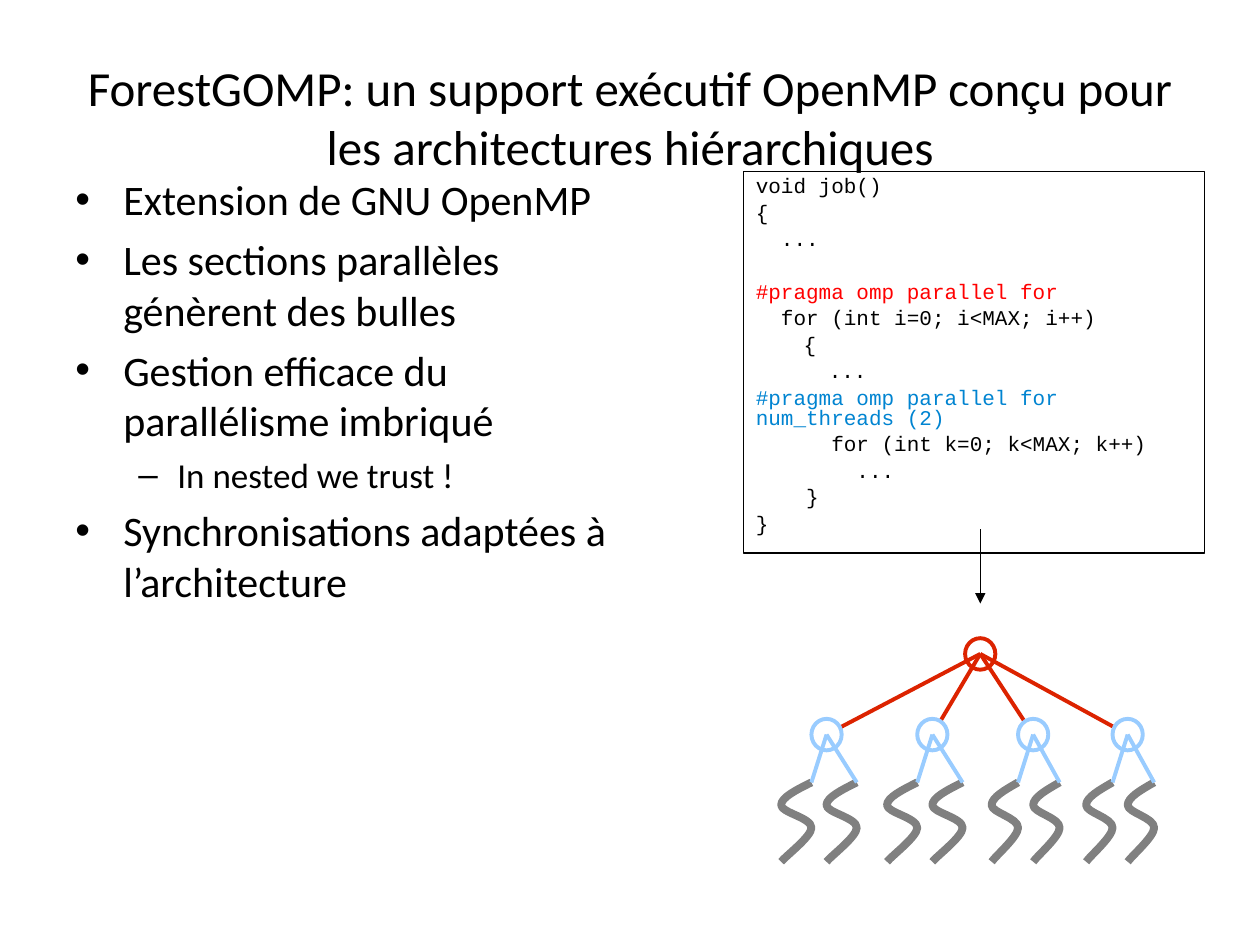
"""Build the ForestGOMP slide: bullet points, nested OpenMP code and its bubble tree."""
from pptx import Presentation
from pptx import util as u
from pptx.dml.color import RGBColor
from pptx.enum import shapes, text
from pptx.oxml import ns
from pptx.oxml.xmlchemy import OxmlElement

BLACK = RGBColor(0, 0, 0)
WHITE = RGBColor(255, 255, 255)
RED = RGBColor(255, 0, 0)
BLUE = RGBColor(0x00, 0x84, 0xD1)
ROOT = RGBColor(0xDC, 0x23, 0x00)
SKY = RGBColor(0x99, 0xCC, 0xFF)
GRAY = RGBColor(0x80, 0x80, 0x80)

TITLE = "ForestGOMP: un support exécutif OpenMP conçu pour les architectures hiérarchiques"
POINTS = [
    (0, "Extension de GNU OpenMP"),
    (0, "Les sections parallèles génèrent des bulles"),
    (0, "Gestion efficace du parallélisme imbriqué"),
    (1, "In nested we trust !"),
    (0, "Synchronisations adaptées à l’architecture"),
]
LEVELS = [("•", 24, 0.38, 0.38), ("–", 20, 0.81, 0.31)]
CODE = [
    ("void job()", BLACK),
    ("{", BLACK),
    ("  ...", BLACK),
    ("", BLACK),
    ("#pragma omp parallel for", RED),
    ("  for (int i=0; i<MAX; i++)", BLACK),
    ("\t{", BLACK),
    ("\t  ...", BLACK),
    ("#pragma omp parallel for num_threads (2)", BLUE),
    ("      for (int k=0; k<MAX; k++)", BLACK),
    ("        ...", BLACK),
    ("    }", BLACK),
    ("}", BLACK),
]
TOP = (7.78, 5.19)
NODES = [(6.56, 0.24), (7.4, 0.24), (8.2, 0.21), (8.95, 0.21)]
NODE_Y, LEG_Y = 5.83, 6.21
WAVE = [(1, 0), (0.5, 0.06), (0, 0.12), (0, 0.18), (0, 0.24),
        (1, 0.28), (1, 0.36), (1, 0.43), (0.17, 0.58), (0, 0.63)]


def style(font, name, size, color):
    font.name, font.size = name, u.Pt(size)
    font.color.rgb = color


def add_tag(parent, tag, **attrs):
    node = OxmlElement(tag)
    for key, value in attrs.items():
        node.set(key, str(value))
    parent.append(node)
    return node


def fill_lines(frame, items):
    frame.word_wrap = True
    for i, item in enumerate(items):
        para = frame.paragraphs[0] if i == 0 else frame.add_paragraph()
        if item[-1]:
            para.add_run().text = item[-1]
        yield para, item[0]


def add_line(slide, start, end, color, width):
    line = slide.shapes.add_connector(
        shapes.MSO_CONNECTOR.STRAIGHT, *map(u.Inches, start + end))
    line.line.color.rgb, line.line.width = color, u.Pt(width)
    add_tag(line._element.spPr, "a:effectLst")
    return line


def add_node(slide, x, y, color):
    node = slide.shapes.add_shape(
        shapes.MSO_SHAPE.OVAL, *map(u.Inches, (x - 0.12, y - 0.125, 0.24, 0.25)))
    node.shadow.inherit = False
    node.fill.solid()
    node.fill.fore_color.rgb = WHITE
    node.line.color.rgb, node.line.width = color, u.Pt(2.25)


def add_wave(slide, left, width):
    start, *rest = [(u.Inches(left + a * width), u.Inches(LEG_Y + b)) for a, b in WAVE]
    form = slide.shapes.build_freeform(*start)
    form.add_line_segments(rest, close=False)
    wave = form.convert_to_shape()
    wave.shadow.inherit = False
    wave.fill.background()
    wave.line.color.rgb, wave.line.width = GRAY, u.Pt(4.5)
    steps = list(wave._element.iter(ns.qn("a:lnTo")))
    track = steps[0].getparent()
    for i in range(0, len(steps), 3):
        curve = add_tag(track, "a:cubicBezTo")
        for step in steps[i:i + 3]:
            curve.append(step[0])
            track.remove(step)


def add_points(slide):
    box = slide.shapes.add_textbox(*map(u.Inches, (0.5, 1.33, 4.49, 5.4)))
    for para, level in fill_lines(box.text_frame, POINTS):
        mark, size, left, hang = LEVELS[level]
        para.level = level
        para.space_before = u.Pt(size * 0.23)
        props = para._p.get_or_add_pPr()
        props.set("marL", str(u.Inches(left)))
        props.set("indent", str(-u.Inches(hang)))
        add_tag(props, "a:buFont", typeface="Arial")
        add_tag(props, "a:buChar", char=mark)
        style(para.font, "Calibri", size, BLACK)


def add_code(slide):
    box = slide.shapes.add_shape(
        shapes.MSO_SHAPE.RECTANGLE, *map(u.Inches, (5.9, 1.36, 3.66, 3.03)))
    box.shadow.inherit = False
    box.fill.background()
    box.line.color.rgb, box.line.width = BLACK, u.Pt(0.75)
    box.text_frame.vertical_anchor = text.MSO_ANCHOR.TOP
    rows = [(color, words) for words, color in CODE]
    for para, color in fill_lines(box.text_frame, rows):
        para.alignment = text.PP_ALIGN.LEFT
        para.line_spacing, para.space_before = 0.8, u.Pt(3.6)
        tabs = add_tag(para._p.get_or_add_pPr(), "a:tabLst")
        add_tag(tabs, "a:tab", pos=u.Inches(0.38), algn="l")
        style(para.font, "Courier New", 12, color)


def add_tree(slide):
    add_node(slide, *TOP, ROOT)
    for x, width in NODES:
        add_line(slide, TOP, (x, NODE_Y), ROOT, 2.25)
    for x, width in NODES:
        add_node(slide, x, NODE_Y, SKY)
        for foot in (x - 0.12, x + width):
            add_wave(slide, foot - width, width)
            add_line(slide, (x, NODE_Y), (foot, LEG_Y), SKY, 2.25)


def main():
    deck = Presentation()
    deck.slide_width, deck.slide_height = u.Inches(10), u.Inches(7.5)
    slide = deck.slides.add_slide(deck.slide_layouts[5])
    title = slide.shapes.title
    title.left, title.top, title.width, title.height = map(u.Inches, (0.5, 0.3, 9, 1.25))
    title.text_frame.text = TITLE
    title.text_frame.vertical_anchor = text.MSO_ANCHOR.MIDDLE
    head = title.text_frame.paragraphs[0]
    head.alignment = text.PP_ALIGN.CENTER
    style(head.font, "Calibri", 28, BLACK)
    add_points(slide)
    add_code(slide)
    add_tree(slide)
    arrow = add_line(slide, (7.78, 4.2), (7.78, 4.79), BLACK, 0.75)
    add_tag(arrow.line._get_or_add_ln(), "a:tailEnd", type="triangle")
    deck.save("out.pptx")


if __name__ == "__main__":
    main()
